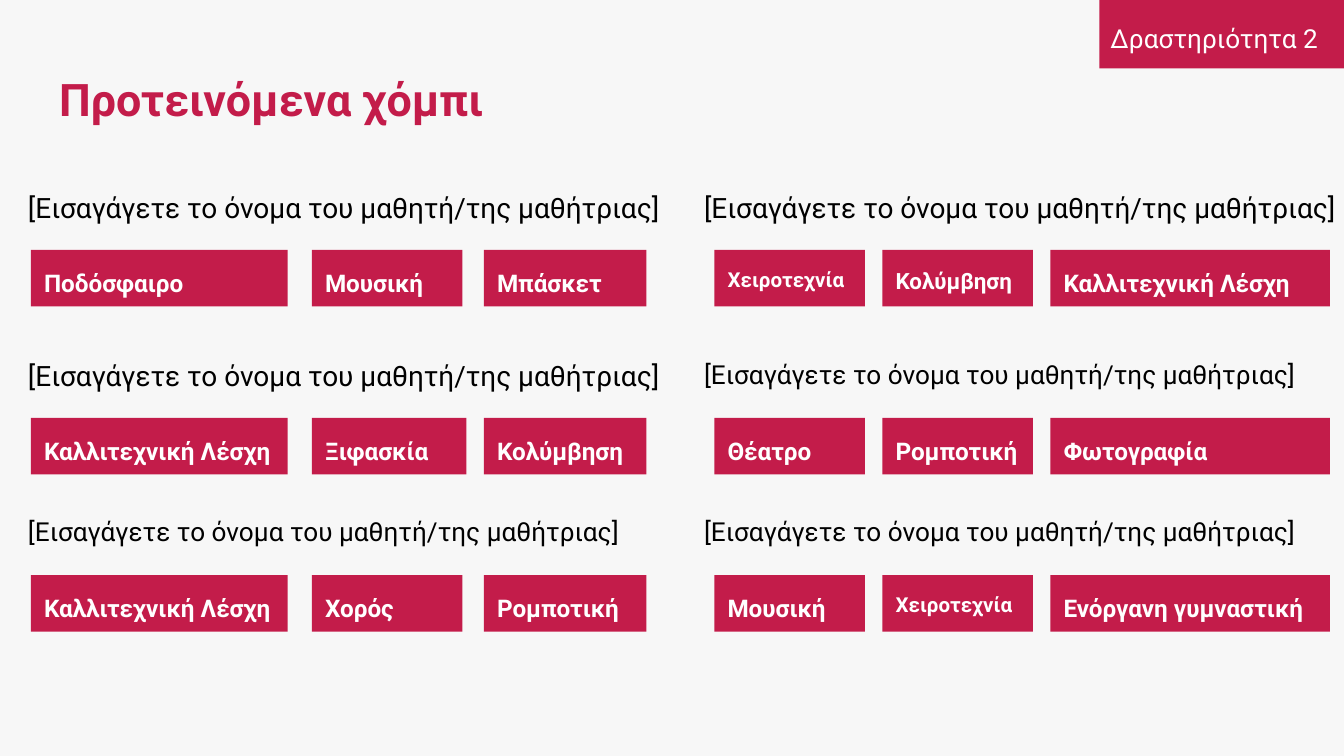
from dataclasses import dataclass

from pptx import Presentation
from pptx import util as u
from pptx.dml.color import RGBColor
from pptx.enum import shapes, text

CRIMSON = RGBColor(0xC3, 0x1C, 0x4A)
PAPER = RGBColor(0xF7, 0xF7, 0xF7)
WHITE = RGBColor(0xFF, 0xFF, 0xFF)
BLACK = RGBColor(0, 0, 0)

SLIDE_WIDTH = u.Inches(10)
SLIDE_HEIGHT = SLIDE_WIDTH * 9 // 16
CELL = SLIDE_WIDTH / 100
LABEL_ROWS, HOBBY_ROWS = 5.8, 4.2
STUDENT = "[Εισαγάγετε το όνομα του μαθητή/της μαθήτριας]"


@dataclass
class Hobby:
    name: str
    size: int = 13
    extra_width: float = 0


@dataclass
class Column:
    left: float
    width: float
    slots: list
    cards: list


ROW_TOPS = [12.8, 25.3, 37]
COLUMNS = [
    Column(1.1, 50.1, [(1.2, 19.1), (22.1, 11.2), (34.9, 12.1)], [
        (15, [Hobby("Ποδόσφαιρο"), Hobby("Μουσική"), Hobby("Μπάσκετ")]),
        (15, [Hobby("Καλλιτεχνική Λέσχη"), Hobby("Ξιφασκία", extra_width=0.3), Hobby("Κολύμβηση")]),
        (14, [Hobby("Καλλιτεχνική Λέσχη"), Hobby("Χορός"), Hobby("Ρομποτική")]),
    ]),
    Column(51.4, 50.8, [(1.75, 11.2), (14.25, 11.2), (26.75, 20.8)], [
        (15, [Hobby("Χειροτεχνία", 11), Hobby("Κολύμβηση", 12), Hobby("Καλλιτεχνική Λέσχη")]),
        (14, [Hobby("Θέατρο"), Hobby("Ρομποτική"), Hobby("Φωτογραφία")]),
        (14, [Hobby("Μουσική"), Hobby("Χειροτεχνία", 11), Hobby("Ενόργανη γυμναστική")]),
    ]),
]


def grid(*cells):
    return [u.Emu(round(cell * CELL)) for cell in cells]


def write(shape, words, size, color, bold=False, align=text.PP_ALIGN.LEFT,
          anchor=text.MSO_ANCHOR.TOP, spacing=1.15):
    frame = shape.text_frame
    frame.word_wrap = True
    frame.auto_size = text.MSO_AUTO_SIZE.NONE
    frame.vertical_anchor = anchor
    frame.margin_left = frame.margin_right = u.Inches(0.1)
    frame.margin_top = frame.margin_bottom = u.Inches(0.1)
    paragraph = frame.paragraphs[0]
    paragraph.alignment = align
    paragraph.line_spacing = spacing
    run = paragraph.add_run()
    run.text = words
    run.font.name = "Roboto"
    run.font.size = u.Pt(size)
    run.font.bold = bold
    run.font.color.rgb = color


def add_block(slide, left, top, width, height):
    block = slide.shapes.add_shape(shapes.MSO_SHAPE.RECTANGLE, *grid(left, top, width, height))
    block.shadow.inherit = False
    block.fill.solid()
    block.fill.fore_color.rgb = CRIMSON
    block.line.fill.background()
    return block


def add_title(slide, left, top, width, height):
    title = slide.shapes.title
    title.left, title.top, title.width, title.height = grid(left, top, width, height)
    write(title, "Προτεινόμενα χόμπι", 24, CRIMSON, bold=True,
          anchor=text.MSO_ANCHOR.MIDDLE, spacing=1.0)


def add_activity_tag(slide, left, top, width, height):
    add_block(slide, left, top, width, height)
    label = slide.shapes.add_textbox(*grid(left - 0.2, top + 0.3, width - 0.7, height - 0.9))
    write(label, "Δραστηριότητα 2", 14, WHITE, align=text.PP_ALIGN.CENTER)


def add_student_card(slide, left, top, width, slots, label_size, hobbies):
    label = slide.shapes.add_textbox(*grid(left, top, width, LABEL_ROWS))
    write(label, STUDENT, label_size, BLACK)
    for (offset, slot_width), hobby in zip(slots, hobbies):
        block = add_block(slide, left + offset, top + LABEL_ROWS,
                          slot_width + hobby.extra_width, HOBBY_ROWS)
        write(block, hobby.name, hobby.size, WHITE, bold=True)


def main():
    presentation = Presentation()
    presentation.slide_width, presentation.slide_height = SLIDE_WIDTH, SLIDE_HEIGHT
    slide = presentation.slides.add_slide(presentation.slide_layouts.get_by_name("Title Only"))
    slide.background.fill.solid()
    slide.background.fill.fore_color.rgb = PAPER

    add_title(slide, 3.4, 3.55, 93.2, 7.6)
    for column in COLUMNS:
        for top, (label_size, hobbies) in zip(ROW_TOPS, column.cards):
            add_student_card(slide, column.left, top, column.width, column.slots,
                             label_size, hobbies)
    add_activity_tag(slide, 81.8, 0, 18.2, 5.1)
    presentation.save("out.pptx")


if __name__ == "__main__":
    main()
